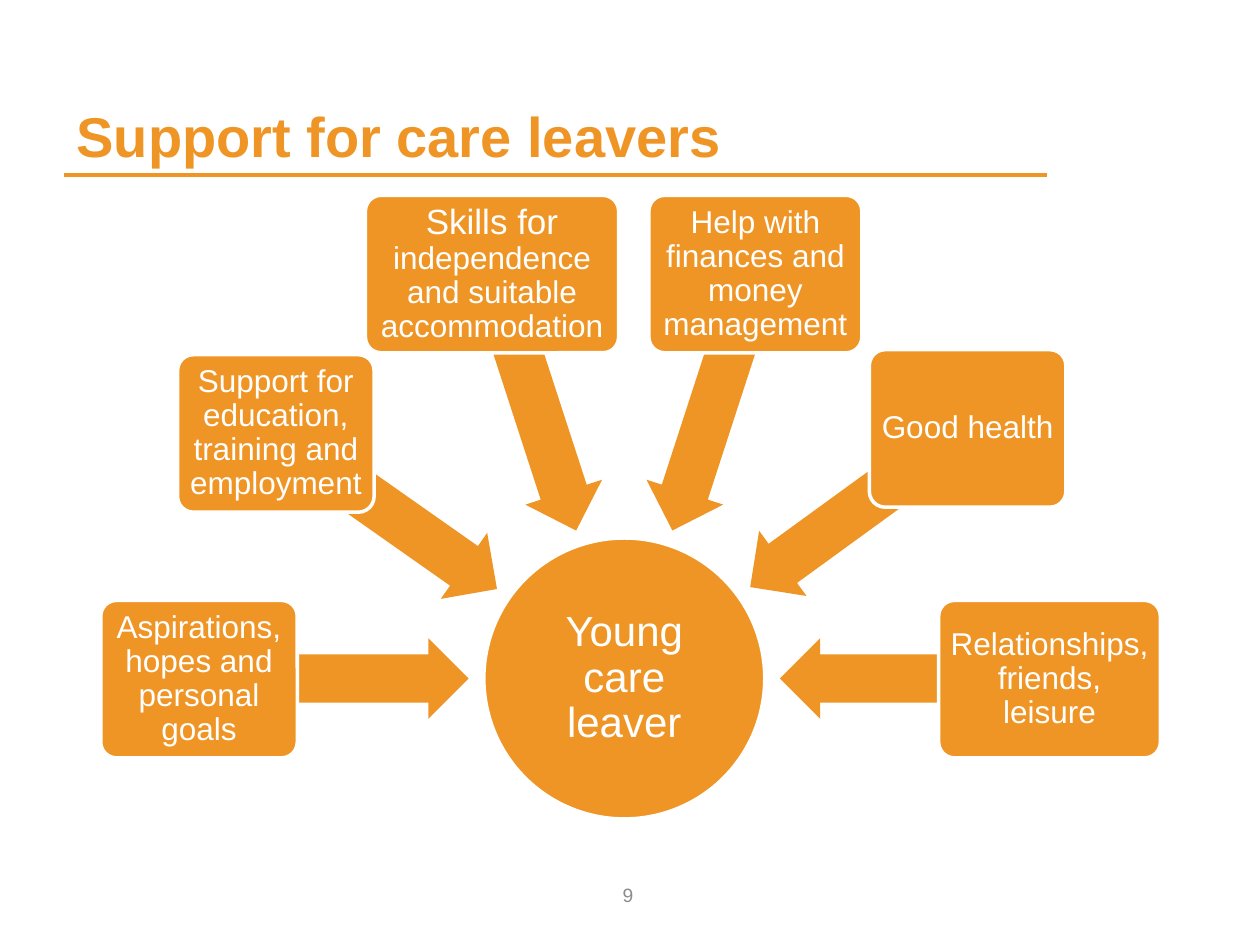
from collections import namedtuple
from math import cos, radians, sin

from lxml.etree import SubElement
from pptx import Presentation
from pptx.dml.color import RGBColor
from pptx.enum.shapes import MSO_CONNECTOR as Connector, MSO_SHAPE as Shape
from pptx.enum.text import MSO_ANCHOR as Anchor, PP_ALIGN as Align
from pptx.oxml.ns import qn
from pptx.util import Inches, Pt

# The page is a grid of 100 columns by 75 rows
COLUMNS, ROWS = 100, 75
UNIT = Inches(0.1)
ORANGE, WHITE, GREY = "EF9526", "FFFFFF", "8C8C8C"

Box = namedtuple("Box", "left top width height")

# Card runs (text, size), centre column and row inside the diagram, card width,
# and the direction in degrees of its arrow seen from the hub
CARDS = [
    ([("Aspirations, hopes and personal goals", 18)], 7.8, 38.4, 15.6, 180),
    ([("Support for education, training and employment", 18)], 13.9, 18.9, 15.6, 215.1),
    ([("Skills for ", 20), ("independence and suitable accommodation", 18)],
     31.05, 6.25, 20.1, 252),
    ([("Help with finances and money management", 18)], 51.95, 6.25, 16.9, 288),
    ([("Good health", 18)], 68.8, 18.5, 15.6, 324),
    ([("Relationships, friends, leisure", 18)], 75.3, 38.4, 17.6, 0),
]
CARD_HEIGHT = 12.5
HUB_SIZE = 22.3
ARROW_LENGTH, ARROW_HEIGHT, ARROW_RADIUS = 21.4, 6.4, 23.05


def color(value):
    return RGBColor.from_string(value)


def place(box):
    return [round(UNIT * length) for length in box]


def centred(x, y, width, height):
    return Box(x - width / 2, y - height / 2, width, height)


def write(shape, runs, ink, align=Align.CENTER, anchor=Anchor.MIDDLE,
          inset=None, spacing=None, bold=False):
    frame = shape.text_frame
    frame.word_wrap = True
    frame.vertical_anchor = anchor
    if inset is not None:
        frame.margin_left = frame.margin_right = Inches(inset)
        frame.margin_top = frame.margin_bottom = Inches(inset)
    para = frame.paragraphs[0]
    para.alignment = align
    para.line_spacing = spacing
    para.font.name = "Arial"
    para.font.bold = bold
    para.font.color.rgb = color(ink)
    para.font.size = Pt(runs[0][1])
    for text, size in runs:
        span = para.add_run()
        span.text = text
        if size != runs[0][1]:
            span.font.size = Pt(size)


def add_solid(page, kind, box, outline=None):
    shape = page.shapes.add_shape(kind, *place(box))
    shape.shadow.inherit = False
    shape.fill.solid()
    shape.fill.fore_color.rgb = color(ORANGE)
    if outline:
        shape.line.color.rgb = color(outline)
        shape.line.width = Pt(2)
    else:
        shape.line.fill.background()
    return shape


def add_title(page, box):
    title = page.shapes.add_textbox(*place(box))
    write(title, [("Support for care leavers", 32)], ORANGE,
          align=Align.LEFT, anchor=Anchor.BOTTOM, bold=True)
    # Rule along the bottom edge
    left, top, width, height = place(box)
    rule = page.shapes.add_connector(
        Connector.STRAIGHT, left, top + height, left + width, top + height)
    rule.line.color.rgb = color(ORANGE)
    rule.line.width = Pt(2)
    SubElement(rule._element.spPr, qn("a:effectLst"))


def add_diagram(page, box):
    # Hub, centred on the bottom edge
    hub_x = box.left + box.width / 2 - 0.5
    hub_y = box.top + box.height - HUB_SIZE / 2
    hub = add_solid(page, Shape.OVAL, centred(hub_x, hub_y, HUB_SIZE, HUB_SIZE), WHITE)
    write(hub, [("Young care leaver", 24)], WHITE, inset=0.02, spacing=0.9)

    for runs, x, y, width, angle in CARDS:
        # Arrow on a circle around the hub, pointing inwards
        arrow_x = hub_x + ARROW_RADIUS * cos(radians(angle))
        arrow_y = hub_y + ARROW_RADIUS * sin(radians(angle))
        arrow = add_solid(page, Shape.LEFT_ARROW,
                          centred(arrow_x, arrow_y, ARROW_LENGTH, ARROW_HEIGHT))
        arrow.adjustments[0], arrow.adjustments[1] = 0.6, 0.5
        arrow.rotation = angle
        # Card over the arrow's tail
        card_box = centred(box.left + x, box.top + y, width, CARD_HEIGHT)
        card = add_solid(page, Shape.ROUNDED_RECTANGLE, card_box, WHITE)
        card.adjustments[0] = 0.1
        write(card, runs, WHITE, inset=0.04, spacing=0.9)


def add_page_number(page, box):
    number = page.shapes.add_textbox(*place(box))
    write(number, [("9", 11)], GREY)


def main():
    deck = Presentation()
    deck.slide_width, deck.slide_height = UNIT * COLUMNS, UNIT * ROWS
    page = deck.slides.add_slide(deck.slide_layouts[6])
    add_title(page, Box(5.1, 2.9, 78, 11))
    add_diagram(page, Box(8, 15.5, 84.1, 49.5))
    add_page_number(page, Box(38.2, 69, 23.3, 4))
    deck.save("out.pptx")


if __name__ == "__main__":
    main()
